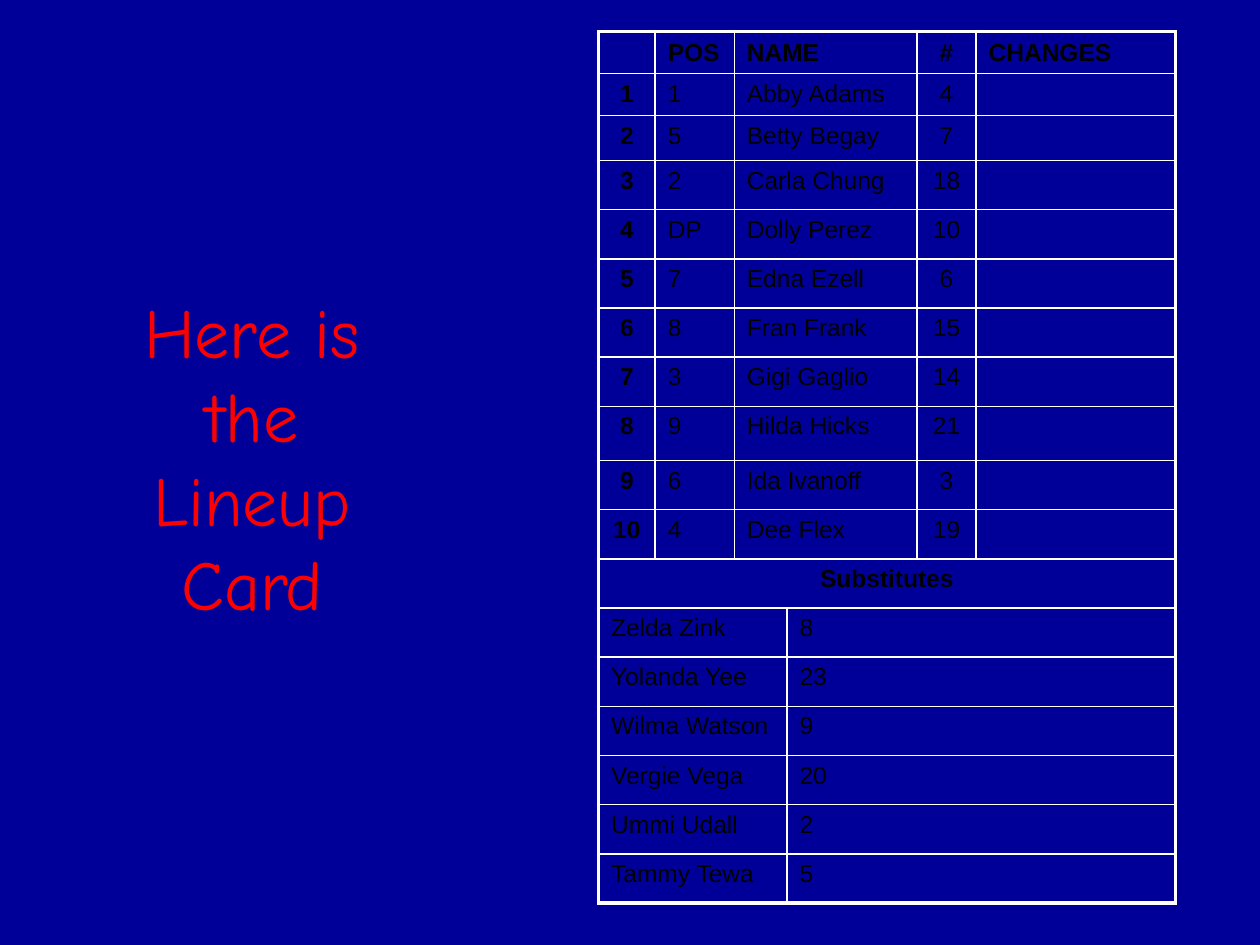
from lxml.etree import SubElement as Sub
from pptx import Presentation
from pptx.dml.color import RGBColor as RGB
from pptx.enum.text import MSO_ANCHOR as Anchor, PP_ALIGN as Align
from pptx.oxml.ns import qn
from pptx.util import Pt

COLORS = {"back": "000099", "title": "FF0000", "ink": "000000", "line": "FFFFFF"}
TITLE = "Here is the Lineup Card"
HEAD = ("", "POS", "NAME", "#", "CHANGES")
LINEUP = [
    ("1", "Abby Adams", "4"),
    ("5", "Betty Begay", "7"),
    ("2", "Carla Chung", "18"),
    ("DP", "Dolly Perez", "10"),
    ("7", "Edna Ezell", "6"),
    ("8", "Fran Frank", "15"),
    ("3", "Gigi Gaglio", "14"),
    ("9", "Hilda Hicks", "21"),
    ("6", "Ida Ivanoff", "3"),
    ("4", "Dee Flex", "19"),
]
SUBS = [
    ("Zelda Zink", "8"),
    ("Yolanda Yee", "23"),
    ("Wilma Watson", "9"),
    ("Vergie Vega", "20"),
    ("Ummi Udall", "2"),
    ("Tammy Tewa", "5"),
]
COLS = (32.4, 45.2, 30.1, 74.4, 33.7, 114)
ROW = 28.1
ODD_ROWS = {0: 23.6, 1: 23.4, 2: 25.7, 8: 31}
THIN, THICK = 1, 2.25
WIDE = (0, 1, 2, 4, 5)  # first column of each field in a lineup row


def write(frame, text, font="Arial", size=14, color="ink", bold=False, center=False):
    para = frame.paragraphs[0]
    para.alignment = Align.CENTER if center else Align.LEFT
    if not text:  # keeps an empty cell from growing its row
        Sub(para._p, qn("a:endParaRPr"), sz=str(size * 100))
        return
    run = para.add_run()
    run.text = text
    run.font.name, run.font.size, run.font.bold = font, Pt(size), bold
    run.font.color.rgb = RGB.from_string(COLORS[color])


def frame_cell(cell, edges):
    """Draw the four borders; edges tells which lie on the table's outside."""
    props = cell._tc.get_or_add_tcPr()
    for side, outer in zip("LRTB", edges):
        line = Sub(props, qn("a:ln" + side), w=str(Pt(THICK if outer else THIN)))
        Sub(Sub(line, qn("a:solidFill")), qn("a:srgbClr"), val=COLORS["line"])
    cell.fill.background()


def add_card(slide):
    rows = [[(c, t, True, t == "#") for c, t in zip(WIDE, HEAD)]]
    for n, (pos, name, num) in enumerate(LINEUP, 1):
        rows.append([(0, str(n), True, True), (1, pos, False, False),
                     (2, name, False, False), (4, num, False, True),
                     (5, "", False, False)])
    rows.append([(0, "Substitutes", True, True)])
    rows += [[(0, name, False, False), (3, num, False, False)] for name, num in SUBS]

    highs = [ODD_ROWS.get(r, ROW) for r in range(len(rows))]
    table = slide.shapes.add_table(len(rows), len(COLS), Pt(342), Pt(18),
                                   Pt(sum(COLS)), Pt(sum(highs))).table
    table.first_row = table.horz_banding = False
    for col, width in zip(table.columns, COLS):
        col.width = Pt(width)
    for row, high in zip(table.rows, highs):
        row.height = Pt(high)

    for r, row in enumerate(rows):
        ends = [c for c, *_ in row[1:]] + [len(COLS)]
        for (c, text, bold, center), end in zip(row, ends):
            cell = table.cell(r, c)
            if end - c > 1:
                cell.merge(table.cell(r, end - 1))
            frame_cell(cell, (c == 0, end == len(COLS), r == 0, r == len(rows) - 1))
            cell.vertical_anchor = Anchor.TOP if r else Anchor.MIDDLE
            write(cell.text_frame, text, bold=bold, center=center)


def main():
    deck = Presentation()
    deck.slide_width, deck.slide_height = Pt(720), Pt(540)
    slide = deck.slides.add_slide(deck.slide_layouts[6])
    back = slide.background.fill
    back.solid()
    back.fore_color.rgb = RGB.from_string(COLORS["back"])

    frame = slide.shapes.add_textbox(Pt(54), Pt(48), Pt(180), Pt(426)).text_frame
    frame.word_wrap = True
    frame.vertical_anchor = Anchor.MIDDLE
    write(frame, TITLE, font="Comic Neue", size=40, color="title", center=True)
    add_card(slide)
    deck.save("out.pptx")


if __name__ == "__main__":
    main()
